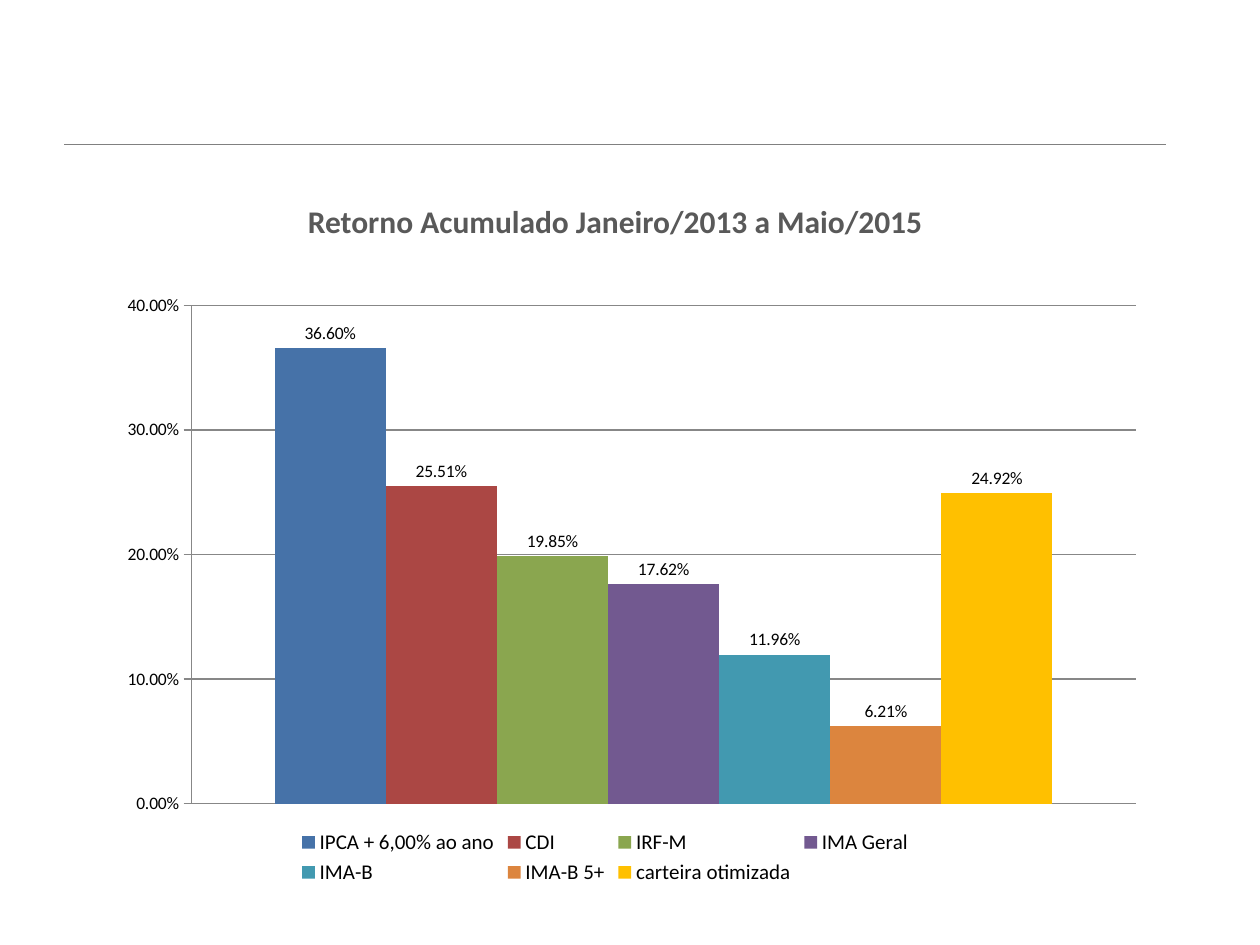
from lxml.etree import SubElement
from pptx import Presentation
from pptx.chart.data import CategoryChartData
from pptx.dml.color import RGBColor
from pptx.enum.chart import XL_CHART_TYPE, XL_LABEL_POSITION, XL_LEGEND_POSITION, XL_TICK_MARK
from pptx.enum.shapes import MSO_CONNECTOR
from pptx.enum.text import MSO_ANCHOR, PP_ALIGN
from pptx.oxml import parse_xml
from pptx.oxml.ns import nsdecls, qn
from pptx.util import Cm, Pt

TITLE = "Retorno Acumulado Janeiro/2013 a Maio/2015"
RETURNS = [
    ("IPCA + 6,00% ao ano", 0.3660, "4672A8"),
    ("CDI", 0.2551, "AB4744"),
    ("IRF-M", 0.1985, "8AA64F"),
    ("IMA Geral", 0.1762, "725990"),
    ("IMA-B", 0.1196, "4299B0"),
    ("IMA-B 5+", 0.0621, "DC853E"),
    ("carteira otimizada", 0.2492, "FFC000"),
]
THEME = {
    "font": "Calibri",
    "title": "595959",
    "text": "000000",
    "rule": "808080",
    "grid": "878787",
    "title_size": Pt(18),
    "chart_size": Pt(10),
    "legend_size": Pt(12),
    "line": Pt(0.75),
}
PERCENT = "0.00%"
PLOT_AREA = {"x": 0.11, "y": 0.05, "w": 0.89, "h": 0.81}


def color(name):
    return RGBColor.from_string(THEME[name])


def set_font(font, size, tone, bold=False):
    font.name = THEME["font"]
    font.size = THEME[size]
    font.bold = bold
    font.color.rgb = color(tone)


def set_line(line, tone):
    line.color.rgb = color(tone)
    line.width = THEME["line"]


def add_rule(page):
    rule = page.shapes.add_connector(MSO_CONNECTOR.STRAIGHT, Cm(1.3), Cm(2.92), Cm(23.5), Cm(2.92))
    set_line(rule.line, "rule")
    SubElement(rule._element.spPr, qn("a:effectLst"))


def add_title(page):
    box = page.shapes.title
    box.left, box.top, box.width, box.height = Cm(4.9), Cm(3.94), Cm(15.01), Cm(1.02)
    frame = box.text_frame
    frame.text = TITLE
    frame.word_wrap = True
    frame.vertical_anchor = MSO_ANCHOR.MIDDLE
    para = frame.paragraphs[0]
    para.alignment = PP_ALIGN.CENTER
    set_font(para.font, "title_size", "title", True)


def place_plot_area(chart):
    area = chart._chartSpace.chart.plotArea
    for old in area.findall(qn("c:layout")):
        area.remove(old)
    modes = '<c:xMode val="edge"/><c:yMode val="edge"/>'
    sizes = "".join(f'<c:{side} val="{share}"/>' for side, share in PLOT_AREA.items())
    area.insert(0, parse_xml(
        f'<c:layout {nsdecls("c")}><c:manualLayout><c:layoutTarget val="inner"/>'
        f"{modes}{sizes}</c:manualLayout></c:layout>"
    ))


def add_returns_chart(page):
    data = CategoryChartData(number_format=PERCENT)
    data.categories = ["1"]
    for name, value, _ in RETURNS:
        data.add_series(name, [value])
    chart = page.shapes.add_chart(
        XL_CHART_TYPE.COLUMN_CLUSTERED, Cm(1.5), Cm(5.54), Cm(21.41), Cm(12.4), data
    ).chart
    chart.has_title = False
    set_font(chart.font, "chart_size", "text")

    chart.has_legend = True
    chart.legend.position = XL_LEGEND_POSITION.BOTTOM
    chart.legend.include_in_layout = False
    set_font(chart.legend.font, "legend_size", "text")

    chart.category_axis.visible = False
    axis = chart.value_axis
    axis.minimum_scale, axis.maximum_scale, axis.major_unit = 0, 0.4, 0.1
    axis.major_tick_mark = XL_TICK_MARK.OUTSIDE
    axis.tick_labels.number_format = PERCENT
    axis.tick_labels.number_format_is_linked = False
    axis.has_major_gridlines = True
    set_line(axis.format.line, "grid")
    set_line(axis.major_gridlines.format.line, "grid")

    plot = chart.plots[0]
    plot.gap_width = 150
    plot.overlap = 0
    plot.vary_by_categories = False
    for series, (_, _, fill) in zip(plot.series, RETURNS):
        series.format.fill.solid()
        series.format.fill.fore_color.rgb = RGBColor.from_string(fill)
        series.invert_if_negative = False
        labels = series.data_labels
        labels.show_value = True
        labels.number_format = PERCENT
        labels.number_format_is_linked = False
        labels.position = XL_LABEL_POSITION.OUTSIDE_END
    place_plot_area(chart)


def main():
    deck = Presentation()
    deck.slide_width, deck.slide_height = Cm(25.4), Cm(19.05)
    page = deck.slides.add_slide(deck.slide_layouts[5])
    add_rule(page)
    add_title(page)
    add_returns_chart(page)
    deck.save("out.pptx")


if __name__ == "__main__":
    main()
